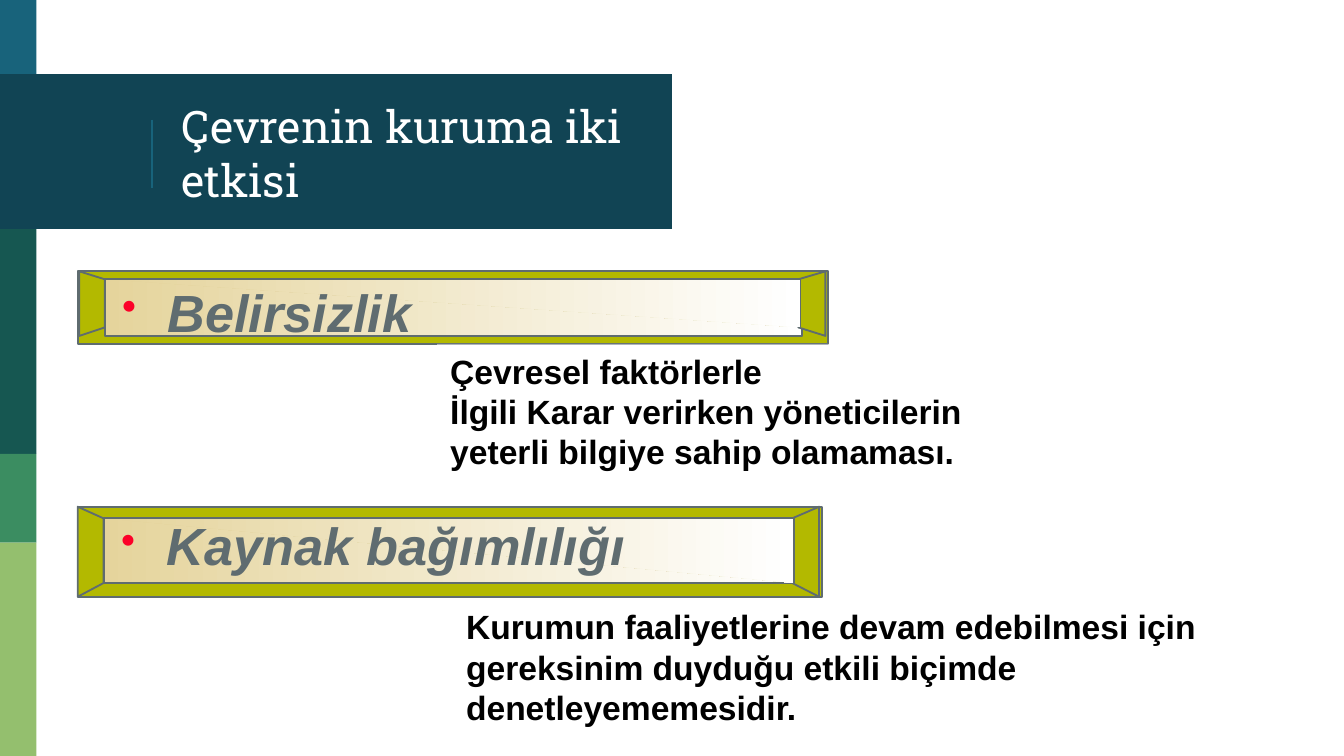
"""Build a slide on the two effects the environment has on an organisation."""
from dataclasses import dataclass

from lxml import etree
from pptx import Presentation
from pptx.dml.color import RGBColor
from pptx.enum.shapes import MSO_CONNECTOR, MSO_SHAPE
from pptx.enum.text import MSO_ANCHOR, MSO_AUTO_SIZE, PP_ALIGN
from pptx.oxml.ns import qn
from pptx.util import Cm, Pt

RECT = MSO_SHAPE.RECTANGLE
STRAIGHT = MSO_CONNECTOR.STRAIGHT
TOP, MIDDLE = MSO_ANCHOR.TOP, MSO_ANCHOR.MIDDLE
NO_FIT, GROW = MSO_AUTO_SIZE.NONE, MSO_AUTO_SIZE.SHAPE_TO_FIT_TEXT
LEFT = PP_ALIGN.LEFT


@dataclass(frozen=True)
class Theme:
    blue: str = "18637B"
    navy: str = "114454"
    teal: str = "165751"
    green: str = "3B8D61"
    lime: str = "94BF6E"
    olive: str = "B3B900"
    sand: str = "E5D49C"
    slate: str = "5F6C70"
    bullet: str = "FC0128"
    white: str = "FFFFFF"
    black: str = "000000"
    title_font: str = "Roboto Slab"
    body_font: str = "Arial"
    title_size: float = 24
    label_size: float = 28
    body_size: float = 18


THEME = Theme()


@dataclass(frozen=True)
class Box:
    left: float
    top: float
    width: float
    height: float

    @property
    def right(self) -> float:
        return self.left + self.width

    @property
    def bottom(self) -> float:
        return self.top + self.height

    def emu(self) -> tuple:
        return Cm(self.left), Cm(self.top), Cm(self.width), Cm(self.height)


@dataclass(frozen=True)
class Bar:
    box: Box
    color: str


@dataclass(frozen=True)
class Frame:
    outer: Box
    inner: Box
    bevel_left: float
    bevel_bottom: float
    lip_bottom: float
    label_box: Box
    label: str


@dataclass(frozen=True)
class Note:
    box: Box
    lines: tuple
    wrap: bool


BARS = (
    Bar(Box(0, 0, 0.69, 1.47), THEME.blue),
    Bar(Box(0, 1.4, 12.7, 2.93), THEME.navy),
    Bar(Box(0, 4.33, 0.69, 4.25), THEME.teal),
    Bar(Box(0, 8.58, 0.69, 1.68), THEME.green),
    Bar(Box(0, 10.26, 0.69, 4.03), THEME.lime),
)
FRAMES = (
    Frame(Box(1.47, 5.13, 14.18, 1.38), Box(1.98, 5.28, 13.18, 1.07),
          1.5, 6.35, 6.19, Box(2.08, 5.16, 6.02, 1.45), "Belirsizlik"),
    Frame(Box(1.47, 9.58, 14.06, 1.7), Box(1.96, 9.8, 13.08, 1.22),
          1.47, 11.28, 11.02, Box(2.06, 9.58, 10.11, 1.96), "Kaynak bağımlılığı"),
)
NOTES = (
    Note(Box(8.26, 6.5, 10.46, 2.57),
         ("Çevresel faktörlerle", "İlgili Karar verirken yöneticilerin",
          "yeterli bilgiye sahip olamaması."), False),
    Note(Box(8.56, 11.33, 16.05, 2.57),
         ("Kurumun faaliyetlerine devam edebilmesi için gereksinim duyduğu "
          "etkili biçimde denetleyememesidir.",), True),
)


def rgb(color: str) -> RGBColor:
    return RGBColor.from_string(color)


def set_frame(tf, anchor, fit, wrap: bool, side: float, vertical: float) -> None:
    tf.auto_size, tf.word_wrap, tf.vertical_anchor = fit, wrap, anchor
    tf.margin_left = tf.margin_right = Cm(side)
    tf.margin_top = tf.margin_bottom = Cm(vertical)


def set_font(p, name: str, size: float, color: str, bold=False, italic=False) -> None:
    p.alignment = LEFT
    p.font.name, p.font.size = name, Pt(size)
    p.font.bold, p.font.italic = bold, italic
    p.font.color.rgb = rgb(color)


def add_rect(shapes, box: Box, color: str):
    sp = shapes.add_shape(RECT, *box.emu())
    sp.shadow.inherit = False
    sp.fill.solid()
    sp.fill.fore_color.rgb = rgb(color)
    sp.line.fill.background()
    return sp


def add_divider(shapes, x: float, top: float, bottom: float) -> None:
    line = shapes.add_connector(STRAIGHT, Cm(x), Cm(top), Cm(x), Cm(bottom))
    line.line.color.rgb = rgb(THEME.blue)
    line.line.width = Pt(0.75)
    etree.SubElement(line.element.spPr, qn("a:effectLst"))


def add_title(slide, box: Box, text: str) -> None:
    sp = slide.shapes.title
    sp.element.getparent().append(sp.element)
    sp.left, sp.top, sp.width, sp.height = box.emu()
    tf = sp.text_frame
    tf.text = text
    set_frame(tf, MIDDLE, NO_FIT, True, 0.25, 0.25)
    set_font(tf.paragraphs[0], THEME.title_font, THEME.title_size, THEME.white)


def add_panel(shapes, points: list, gradient: bool = False, close: bool = True) -> None:
    start, *rest = [(Cm(x), Cm(y)) for x, y in points]
    builder = shapes.build_freeform(*start)
    builder.add_line_segments(rest, close=close)
    sp = builder.convert_to_shape()
    sp.shadow.inherit = False
    if gradient:
        sp.fill.gradient()
        sp.fill.gradient_angle = 0
        for stop, color in zip(sp.fill.gradient_stops, (THEME.sand, THEME.white)):
            stop.color.rgb = rgb(color)
    else:
        sp.fill.solid()
        sp.fill.fore_color.rgb = rgb(THEME.olive)
    sp.line.color.rgb = rgb(THEME.slate)
    sp.line.width = Pt(1)


def corners(box: Box) -> list:
    return [(box.left, box.top), (box.left, box.bottom),
            (box.right, box.bottom), (box.right, box.top)]


def bevel(frame: Frame, outer_x: float, inner_x: float) -> list:
    return [(outer_x, frame.bevel_bottom), (inner_x, frame.lip_bottom),
            (inner_x, frame.inner.top), (outer_x, frame.outer.top)]


def add_label(shapes, box: Box, text: str) -> None:
    tf = shapes.add_textbox(*box.emu()).text_frame
    set_frame(tf, TOP, GROW, False, 0.23, 0.13)
    p = tf.paragraphs[0]
    p.text = text
    set_font(p, THEME.body_font, THEME.label_size, THEME.slate, True, True)
    p.space_before = Pt(THEME.label_size * 0.2)
    props = p._p.get_or_add_pPr()
    props.set("marL", str(Cm(0.86)))
    props.set("indent", str(Cm(-0.86)))
    color = etree.Element(qn("a:buClr"))
    etree.SubElement(color, qn("a:srgbClr"), val=THEME.bullet)
    size = etree.Element(qn("a:buSzPct"), val="80000")
    char = etree.Element(qn("a:buChar"), char="•")
    for item in (color, size, char):
        props.find(qn("a:defRPr")).addprevious(item)


def add_frame(slide, frame: Frame) -> None:
    shapes = slide.shapes.add_group_shape().shapes
    outer, inner = frame.outer, frame.inner
    add_panel(shapes, corners(outer))
    add_panel(shapes, bevel(frame, frame.bevel_left, inner.left))
    add_panel(shapes, corners(inner), gradient=True)
    add_panel(shapes, bevel(frame, outer.right - 0.05, inner.right - 0.07))
    edge = inner.right - 0.03
    add_panel(shapes, [(inner.left + 0.03, inner.top), (edge, inner.top),
                       (edge, frame.lip_bottom)], gradient=True, close=False)
    add_label(shapes, frame.label_box, frame.label)


def add_note(shapes, note: Note) -> None:
    sp = add_rect(shapes, note.box, THEME.white)
    fill_color = sp.element.spPr.find(qn("a:solidFill"))[0]
    etree.SubElement(fill_color, qn("a:alpha"), val="50000")
    tf = sp.text_frame
    set_frame(tf, TOP, GROW, note.wrap, 0.25, 0.13)
    tf.text = "\n".join(note.lines)
    for p in tf.paragraphs:
        set_font(p, THEME.body_font, THEME.body_size, THEME.black, True)


def main() -> None:
    prs = Presentation()
    prs.slide_width, prs.slide_height = Cm(25.4), Cm(14.29)
    slide = prs.slides.add_slide(prs.slide_layouts[5])
    for bar in BARS:
        add_rect(slide.shapes, bar.box, bar.color)
    add_divider(slide.shapes, 2.87, 2.26, 3.56)
    add_title(slide, Box(3.18, 1.47, 8.92, 2.84), "Çevrenin kuruma iki etkisi")
    for frame in FRAMES:
        add_frame(slide, frame)
    for note in NOTES:
        add_note(slide.shapes, note)
    prs.save("out.pptx")


if __name__ == "__main__":
    main()
